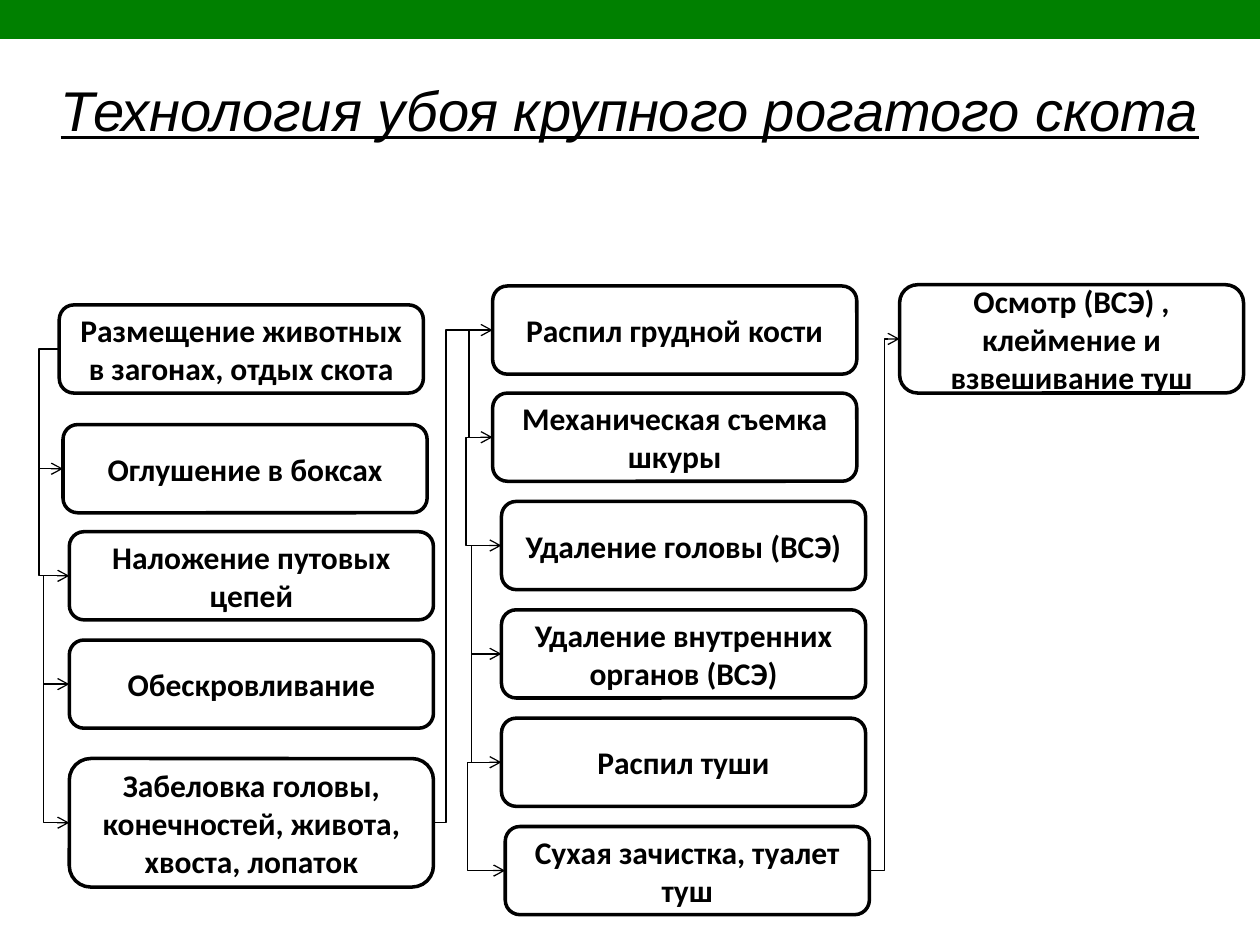
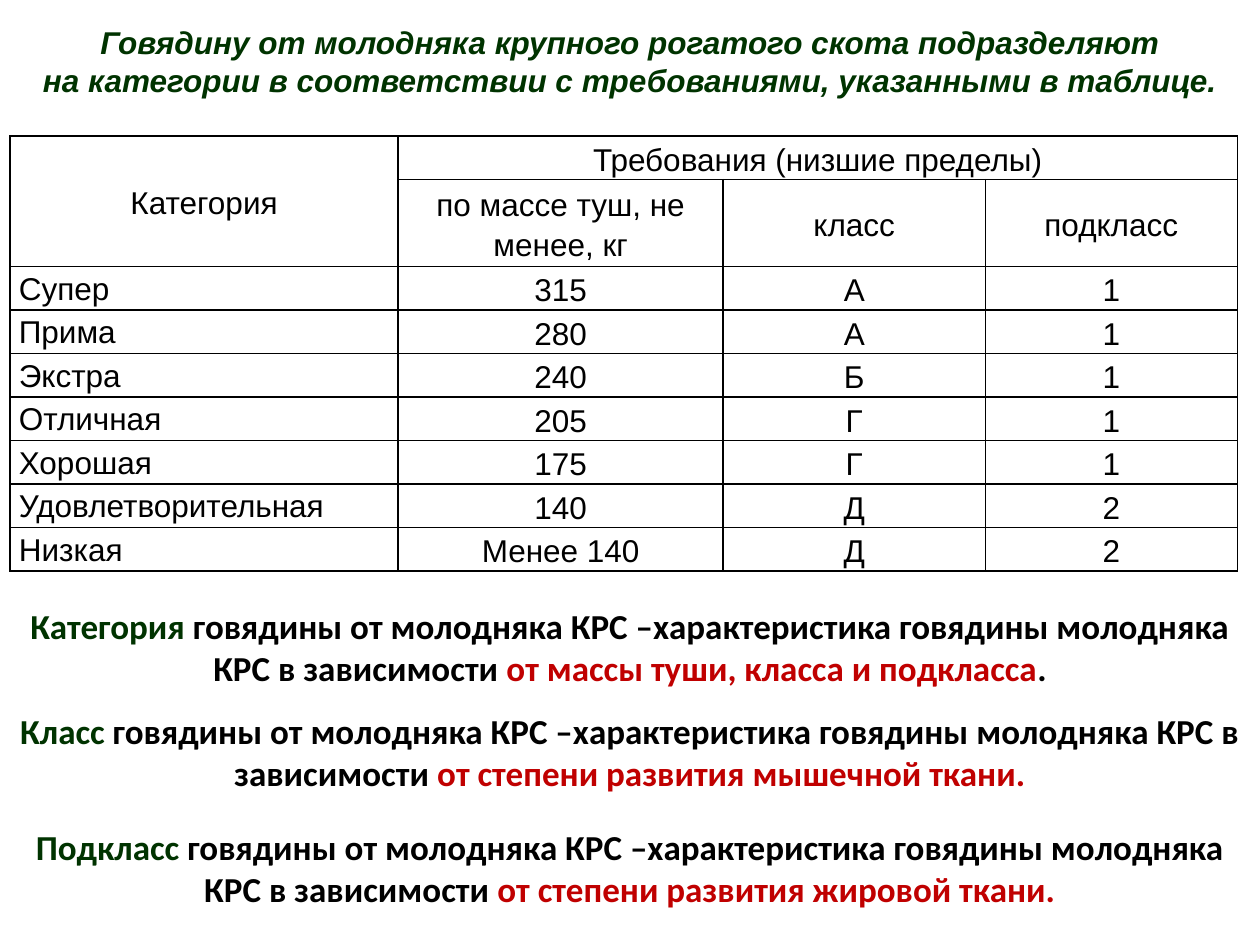
from lxml import etree
from pptx import Presentation
from pptx.dml.color import RGBColor
from pptx.enum.shapes import MSO_CONNECTOR, MSO_SHAPE
from pptx.enum.text import MSO_ANCHOR as ANCHOR, PP_ALIGN as ALIGN
from pptx.oxml.ns import qn
from pptx.util import Inches, Pt

BLACK = RGBColor(0x00, 0x00, 0x00)
WHITE = RGBColor(0xFF, 0xFF, 0xFF)
BAND_GREEN = RGBColor(0x00, 0x80, 0x00)
DARK_GREEN = RGBColor(0x00, 0x33, 0x00)
RED = RGBColor(0xC0, 0x00, 0x00)
LEFT_SITE, RIGHT_SITE = 1, 3


def write(tf, *paragraphs, size=18, font="Calibri", color=BLACK, bold=False,
          italic=False, underline=False, align=ALIGN.CENTER, spacing=None):
    """Fill a text frame; a paragraph is a string or a list of (text, colour) runs."""
    tf.word_wrap = True
    for i, runs in enumerate(paragraphs):
        p = tf.add_paragraph() if i else tf.paragraphs[0]
        p.alignment = align
        if spacing:
            p.line_spacing = spacing
        for text, run_color in [(runs, color)] if isinstance(runs, str) else runs:
            r = p.add_run()
            r.text = text
            r.font.name, r.font.size = font, Pt(size)
            r.font.bold, r.font.italic, r.font.underline = bold, italic, underline
            r.font.color.rgb = run_color


def add_text(slide, x, y, w, h, *paragraphs, anchor=ANCHOR.TOP, **style):
    tf = slide.shapes.add_textbox(Inches(x), Inches(y), Inches(w), Inches(h)).text_frame
    tf.vertical_anchor = anchor
    write(tf, *paragraphs, **style)


prs = Presentation()
prs.slide_width, prs.slide_height = Inches(10), Inches(7.5)
blank = prs.slide_layouts[6]

# Slide 1: slaughter process flow
s = prs.slides.add_slide(blank)
add_text(s, 0, 0.55, 10, 0.7, "Технология убоя крупного рогатого скота",
         size=32, font="Arial", italic=True, underline=True)

band = s.shapes.add_shape(MSO_SHAPE.RECTANGLE, 0, 0, prs.slide_width, Inches(0.31))
band.shadow.inherit = False
band.fill.solid()
band.fill.fore_color.rgb = BAND_GREEN
band.line.fill.background()

# Each step: text, left, top, width, height, x of the bend in the arrow leading to it
STEPS = [
    ("Размещение животных в загонах, отдых скота", 0.47, 2.42, 2.89, 0.7, None),
    ("Оглушение в боксах", 0.5, 3.37, 2.89, 0.7, 0.31),
    ("Наложение путовых цепей", 0.55, 4.22, 2.89, 0.7, 0.31),
    ("Обескровливание", 0.55, 5.08, 2.89, 0.7, 0.34),
    ("Забеловка головы, конечностей, живота, хвоста, лопаток", 0.55, 6.02, 2.89, 1.02, 0.34),
    ("Распил грудной кости", 3.91, 2.27, 2.89, 0.7, 3.54),
    ("Механическая съемка шкуры", 3.91, 3.12, 2.89, 0.7, 3.72),
    ("Удаление головы (ВСЭ)", 3.98, 3.98, 2.89, 0.7, 3.7),
    ("Удаление внутренних органов (ВСЭ)", 3.98, 4.84, 2.89, 0.7, 3.74),
    ("Распил туши", 3.98, 5.7, 2.89, 0.7, 3.74),
    ("Сухая зачистка, туалет туш", 4.01, 6.56, 2.89, 0.7, 3.71),
    ("Осмотр (ВСЭ) , клеймение и взвешивание туш", 7.14, 2.26, 2.73, 0.86, 7.02),
]
boxes = []
for text, x, y, w, h, _ in STEPS:
    sp = s.shapes.add_shape(MSO_SHAPE.ROUNDED_RECTANGLE,
                            Inches(x), Inches(y), Inches(w), Inches(h))
    sp.shadow.inherit = False
    sp.fill.solid()
    sp.fill.fore_color.rgb = WHITE
    sp.line.color.rgb = BLACK
    sp.line.width = Pt(2)
    sp.text_frame.vertical_anchor = ANCHOR.MIDDLE
    write(sp.text_frame, text, bold=True)
    boxes.append(sp)

for start, end, step in zip(boxes, boxes[1:], STEPS[1:]):
    bend = Inches(step[-1])
    arrow = s.shapes.add_connector(MSO_CONNECTOR.ELBOW, 0, 0, 0, 0)
    arrow.begin_connect(start, RIGHT_SITE if bend > start.left else LEFT_SITE)
    arrow.end_connect(end, LEFT_SITE)
    if arrow.begin_x == arrow.end_x:  # the bend is a share of the width, so it cannot be zero
        arrow.begin_x += Inches(0.01)
    arrow.line.color.rgb = BLACK
    arrow.line.width = Pt(0.75)
    share = (bend - arrow.begin_x) / (arrow.end_x - arrow.begin_x)
    spPr = arrow._element.spPr
    guides = spPr.find(qn("a:prstGeom")).find(qn("a:avLst"))
    etree.SubElement(guides, qn("a:gd"), name="adj1", fmla=f"val {round(share * 100000)}")
    etree.SubElement(spPr.find(qn("a:ln")), qn("a:tailEnd"), type="arrow")
    etree.SubElement(spPr, qn("a:effectLst"))

# Slide 2: beef categories
s = prs.slides.add_slide(blank)
ROWS = [
    ("Категория", "Требования (низшие пределы)", "", ""),
    ("", "по массе туш, не менее, кг", "класс", "подкласс"),
    ("Супер", "315", "А", "1"),
    ("Прима", "280", "А", "1"),
    ("Экстра", "240", "Б", "1"),
    ("Отличная", "205", "Г", "1"),
    ("Хорошая", "175", "Г", "1"),
    ("Удовлетворительная", "140", "Д", "2"),
    ("Низкая", "Менее 140", "Д", "2"),
]
COL_WIDTHS = [3.08, 2.58, 2.08, 2]
table = s.shapes.add_table(len(ROWS), len(COL_WIDTHS), Inches(0.08), Inches(1.08),
                           Inches(9.75), Inches(3.19)).table
table.first_row = table.horz_banding = False
for column, width in zip(table.columns, COL_WIDTHS):
    column.width = Inches(width)
for i, row in enumerate(ROWS):
    table.rows[i].height = Inches(0.64 if i == 1 else 0.32)
    for j, text in enumerate(row):
        cell = table.cell(i, j)
        is_name = j == 0 and i > 1
        cell.margin_left = cell.margin_right = Inches(0.07)
        cell.margin_top = cell.margin_bottom = 0
        cell.vertical_anchor = ANCHOR.TOP if is_name else ANCHOR.MIDDLE
        if text:
            write(cell.text_frame, text, font="Arial", spacing=1.15,
                  align=ALIGN.LEFT if is_name else ALIGN.CENTER)
        tcPr = cell._tc.get_or_add_tcPr()
        for side in ("lnL", "lnR", "lnT", "lnB"):
            ln = etree.SubElement(tcPr, qn(f"a:{side}"), w=str(Pt(1)))
            fill = etree.SubElement(ln, qn("a:solidFill"))
            etree.SubElement(fill, qn("a:srgbClr"), val=str(BLACK))
        cell.fill.background()
table.cell(0, 0).merge(table.cell(1, 0))
table.cell(0, 1).merge(table.cell(0, 3))

add_text(s, 0, 0.13, 10, 0.71,
         "Говядину от молодняка крупного рогатого скота подразделяют",
         "на категории в соответствии с требованиями, указанными в таблице.",
         anchor=ANCHOR.MIDDLE, font="Arial", color=DARK_GREEN, bold=True, italic=True)

DEFINITION = " говядины от молодняка КРС –характеристика говядины молодняка КРС в зависимости "
for y, term, basis, ending in [
    (4.75, "Категория", "от массы туши, класса и подкласса", "."),
    (5.58, "Класс", "от степени развития мышечной ткани.", ""),
    (6.5, "Подкласс", "от степени развития жировой ткани.", ""),
]:
    runs = [(term, DARK_GREEN), (DEFINITION, BLACK), (basis, RED)]
    if ending:
        runs.append((ending, BLACK))
    add_text(s, 0, y, 10, 0.77, runs, size=20, bold=True)

prs.save("out.pptx")
